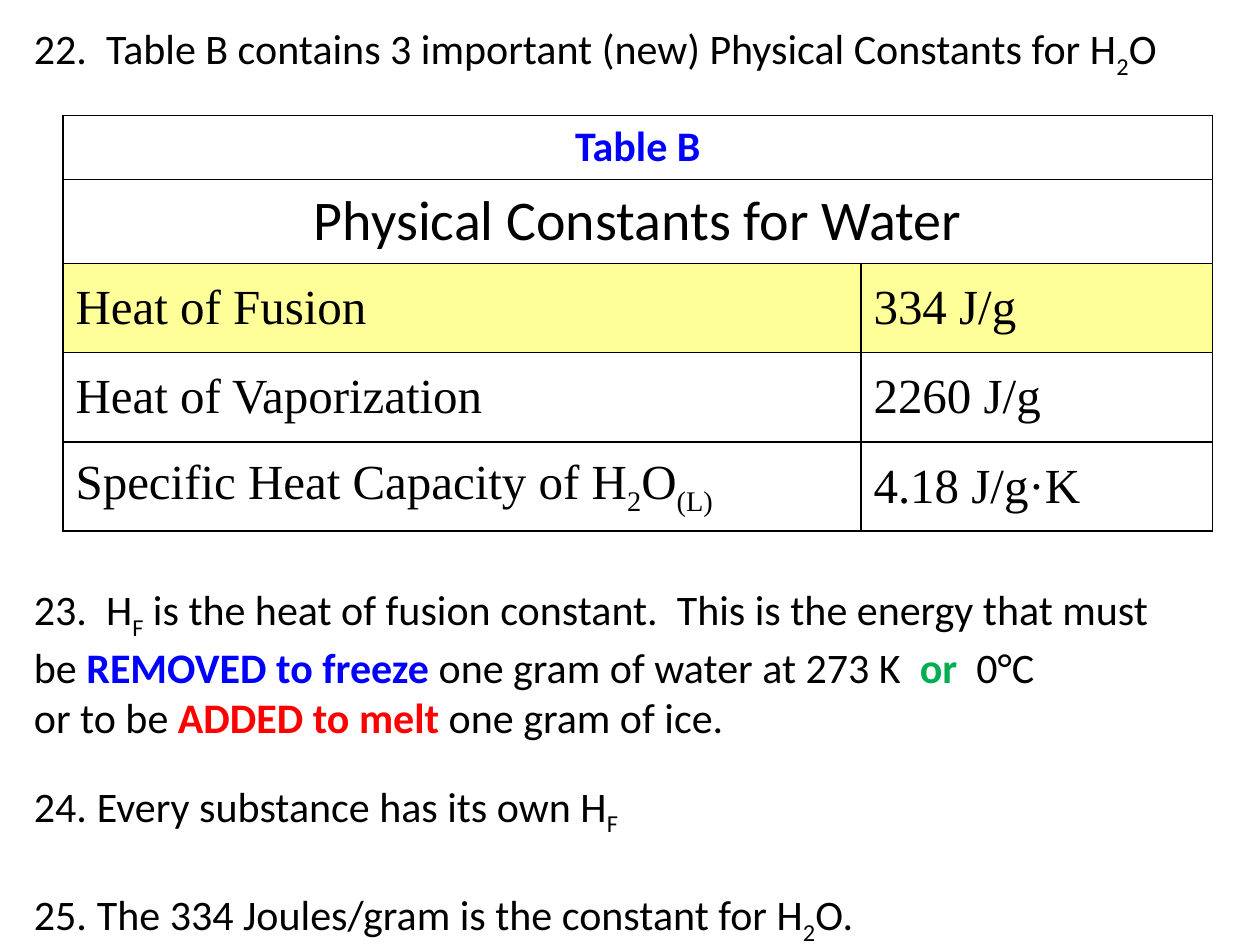
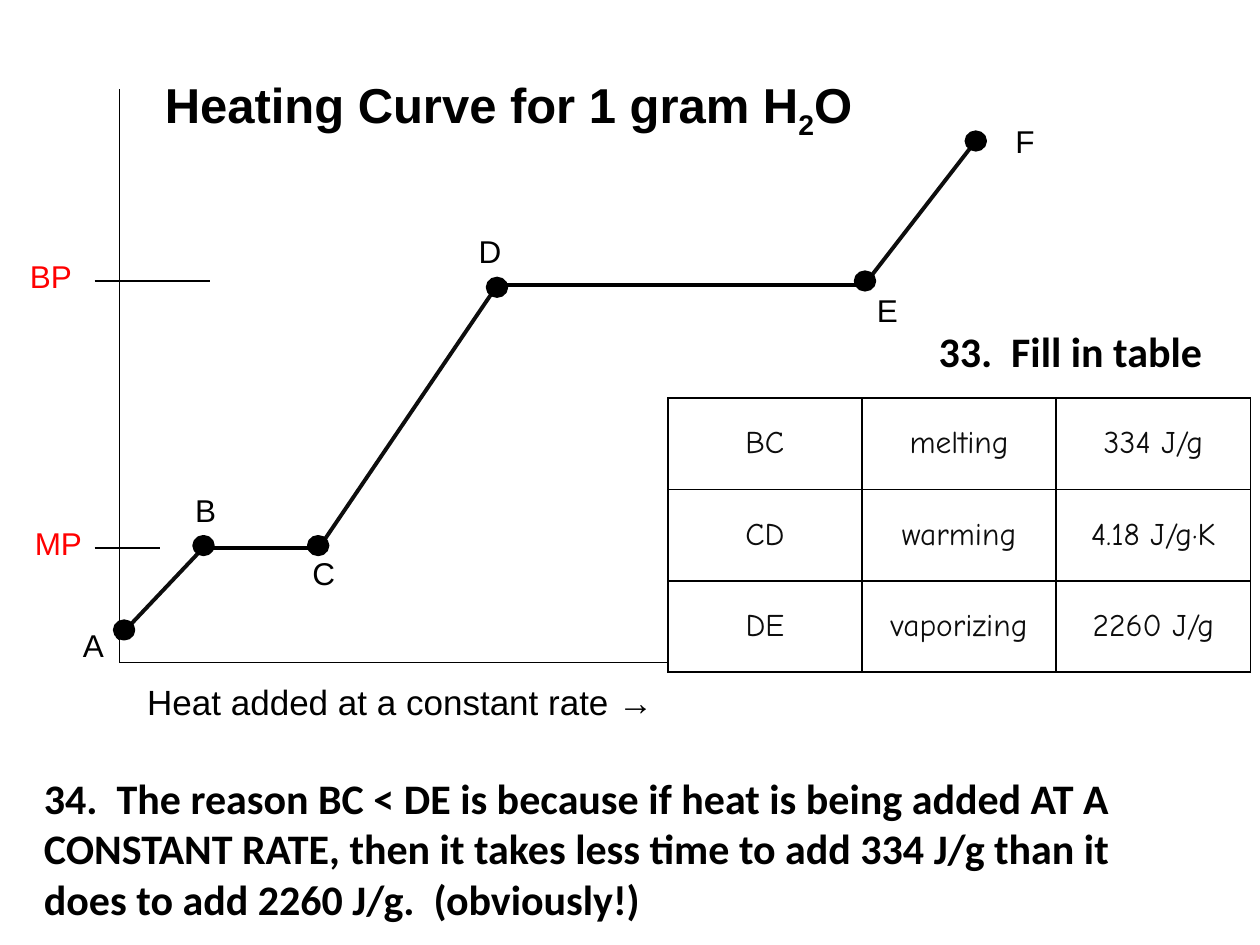
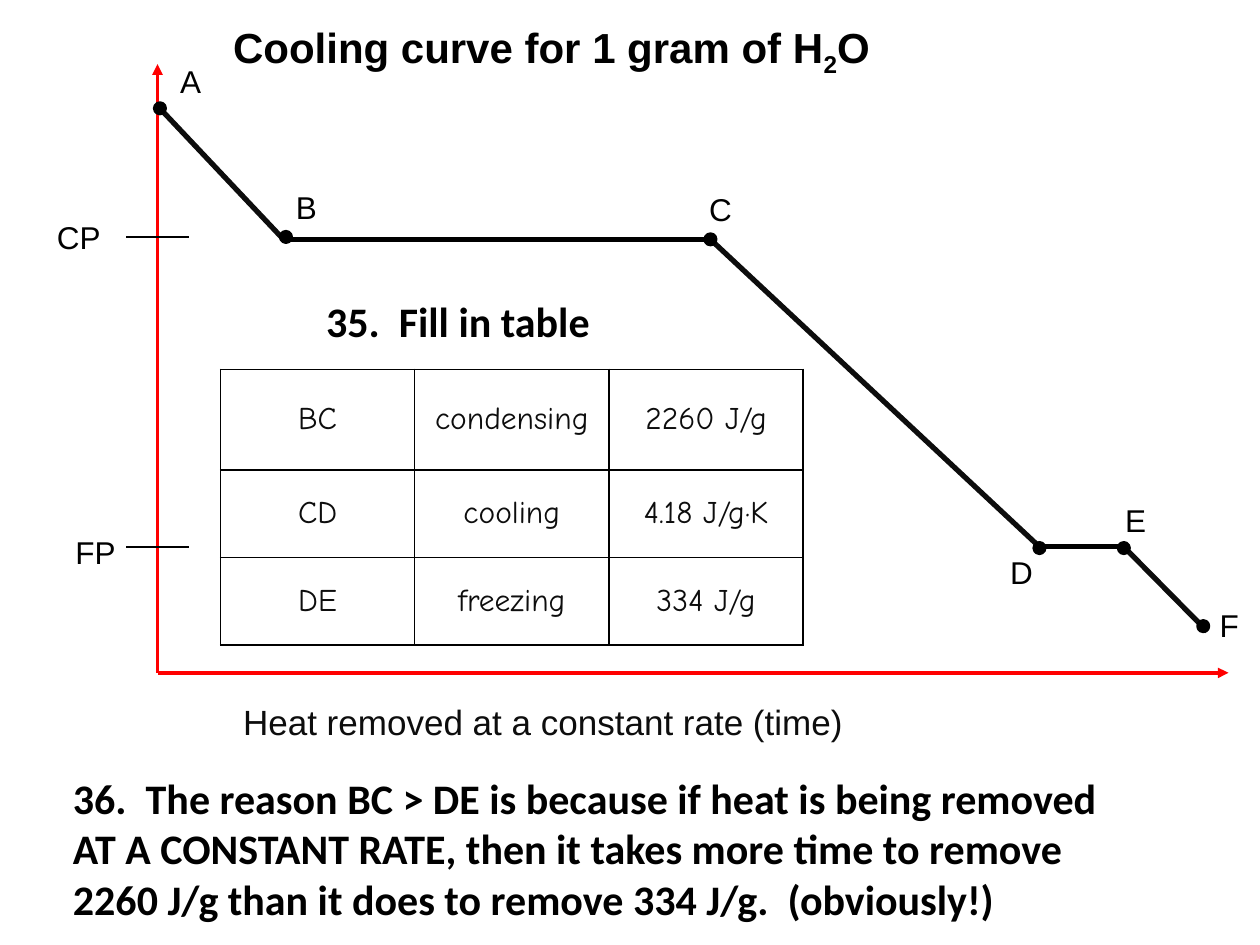
"""Build three slides on the physical constants and phase-change curves of water."""
from itertools import pairwise
from typing import NamedTuple

from lxml.etree import SubElement
from pptx import Presentation
from pptx.dml.color import RGBColor
from pptx.enum.shapes import MSO_CONNECTOR, MSO_SHAPE
from pptx.enum.text import MSO_ANCHOR as Anchor, MSO_AUTO_SIZE, PP_ALIGN as Align
from pptx.oxml.ns import qn
from pptx.util import Pt

BLACK = RGBColor(0x00, 0x00, 0x00)
INK = RGBColor(0x0D, 0x0D, 0x0D)
WHITE = RGBColor(0xFF, 0xFF, 0xFF)
RED = RGBColor(0xFF, 0x00, 0x00)
BLUE = RGBColor(0x00, 0x00, 0xFF)
GREEN = RGBColor(0x00, 0xB0, 0x50)
YELLOW = RGBColor(0xFF, 0xFF, 0x99)

TITLE_AND_BODY, TITLE_ONLY = 1, 5


class Style(NamedTuple):
    font: str
    size: float
    color: RGBColor = BLACK
    bold: bool = False


class CurvePoint(NamedTuple):
    label: str
    vertex: tuple
    dot: tuple
    caption: tuple


NOTE = Style("Calibri", 24)
NOTE_BOLD = NOTE._replace(bold=True)
LABEL = Style("Arial", 18)
RED_LABEL = LABEL._replace(color=RED)
AXIS_NAME = Style("Arial", 20)
ANSWER = Style("Comic Neue", 18, INK)
CONSTANT = Style("Times New Roman", 28)

HEATING_POINTS = [
    CurvePoint("A", (67, 365), (70.9, 360), (40.3, 354.2)),
    CurvePoint("B", (116, 313.2), (116.3, 311.8), (104.4, 277.2)),
    CurvePoint("C", (182.2, 313.2), (181.8, 311.8), (171.4, 313.2)),
    CurvePoint("D", (284.4, 162.7), (284, 164.2), (266.4, 128.9)),
    CurvePoint("E", (494, 162.7), (494.3, 160.6), (494, 162.7)),
    CurvePoint("F", (558, 80), (557.6, 80.6), (573.1, 66.2)),
]
COOLING_POINTS = [
    CurvePoint("A", (90, 60.5), (91.4, 61.9), (95.8, 31.7)),
    CurvePoint("B", (162, 136.8), (163.4, 135.4), (162, 103.7)),
    CurvePoint("C", (406, 136.8), (406, 136.8), (398.2, 105.1)),
    CurvePoint("D", (594, 312.5), (594, 313.2), (570.2, 312.5)),
    CurvePoint("E", (642.2, 312.5), (642.2, 313.2), (635.8, 283)),
    CurvePoint("F", (689.8, 360.7), (687.6, 357.8), (689.8, 342.7)),
]


def write(paragraph, text, style, align=Align.LEFT):
    """Append text to a paragraph, lowering the parts enclosed in underscores."""
    paragraph.alignment = align
    for part, piece in enumerate(text.split("_")):
        for row, line in enumerate(piece.split("\v")):
            if row:
                paragraph.add_line_break()
            if not line:
                continue
            run = paragraph.add_run()
            run.text = line
            run.font.name = style.font
            run.font.size = Pt(style.size)
            run.font.bold = style.bold
            run.font.color.rgb = style.color
            if part % 2:
                run.font._element.set("baseline", "-25000")


def place(shape, left, top, width, height):
    """Move a text shape and fix its frame to top-anchored wrapped text."""
    shape.left, shape.top = Pt(left), Pt(top)
    shape.width, shape.height = Pt(width), Pt(height)
    frame = shape.text_frame
    frame.word_wrap = True
    frame.auto_size = MSO_AUTO_SIZE.NONE
    frame.vertical_anchor = Anchor.TOP
    return frame


def add_titled_slide(prs, layout, title, style, box):
    """Add a slide whose title placeholder holds the given text."""
    slide = prs.slides.add_slide(prs.slide_layouts[layout])
    write(place(slide.shapes.title, *box).paragraphs[0], title, style)
    return slide


def add_text(slide, text, style, box, align=Align.LEFT):
    """Add one text box."""
    frame = place(slide.shapes.add_textbox(0, 0, 0, 0), *box)
    write(frame.paragraphs[0], text, style, align)


def set_number(paragraph, start=None):
    """Number a list paragraph from start, or clear its bullet."""
    properties = paragraph._p.get_or_add_pPr()
    indent = Pt(36) if start else 0
    properties.set("marL", str(indent))
    properties.set("indent", str(-indent))
    if start:
        SubElement(properties, qn("a:buFont"), typeface="+mj-lt")
        SubElement(properties, qn("a:buAutoNum"), type="arabicPeriod", startAt=str(start))
    else:
        SubElement(properties, qn("a:buNone"))


def add_line(slide, start, end, color=BLACK, weight=0.75, arrow=False):
    """Add a straight line, with an arrowhead at its end if asked."""
    line = slide.shapes.add_connector(
        MSO_CONNECTOR.STRAIGHT, *(Pt(value) for value in start + end))
    line.line.color.rgb = color
    line.line.width = Pt(weight)
    if arrow:
        SubElement(line.line._get_or_add_ln(), qn("a:tailEnd"), type="triangle")
    SubElement(line._element.spPr, qn("a:effectLst"))


def add_dot(slide, center, width, height):
    """Add a black dot around a centre."""
    dot = slide.shapes.add_shape(
        MSO_SHAPE.OVAL, Pt(center[0] - width / 2), Pt(center[1] - height / 2),
        Pt(width), Pt(height))
    dot.shadow.inherit = False
    dot.fill.solid()
    dot.fill.fore_color.rgb = BLACK
    dot.line.color.rgb = BLACK
    dot.line.width = Pt(2)


def add_curve(slide, points, weight, dot_size):
    """Draw the segments, captions and dots of a temperature curve."""
    for here, there in pairwise(points):
        plateau = here.vertex[1] == there.vertex[1]
        add_line(slide, here.vertex, there.vertex, BLACK if plateau else INK, weight)
    for point in points:
        add_text(slide, point.label, LABEL, (*point.caption, 30, 29))
        add_dot(slide, point.dot, *dot_size)


def format_cell(cell, text, style, align, fill):
    """Fill, border and write one table cell."""
    cell.fill.solid()
    cell.fill.fore_color.rgb = fill
    cell.vertical_anchor = Anchor.MIDDLE
    properties = cell._tc.get_or_add_tcPr()
    for position, side in enumerate(("lnL", "lnR", "lnT", "lnB")):
        border = SubElement(properties, qn(f"a:{side}"), w=str(Pt(1)))
        SubElement(SubElement(border, qn("a:solidFill")), qn("a:srgbClr"), val=str(BLACK))
        properties.insert(position, border)
    if text:
        write(cell.text_frame.paragraphs[0], text, style, align)


def add_grid(slide, left, top, columns, heights, rows):
    """Add a bordered table; each row is (texts, style, alignment, fill)."""
    table = slide.shapes.add_table(
        len(rows), len(columns), Pt(left), Pt(top),
        Pt(sum(columns)), Pt(sum(heights))).table
    table.first_row = table.horz_banding = False
    for column, width in zip(table.columns, columns):
        column.width = Pt(width)
    for index, (texts, style, align, fill) in enumerate(rows):
        table.rows[index].height = Pt(heights[index])
        for number in range(len(columns)):
            text = texts[number] if number < len(texts) else ""
            format_cell(table.cell(index, number), text, style, align, fill)
        if len(texts) == 1:
            table.cell(index, 0).merge(table.cell(index, len(columns) - 1))


def add_answers(slide, left, top, heights, answers):
    """Add the three-column answer table of a curve."""
    rows = [(texts, ANSWER, Align.CENTER, WHITE) for texts in answers]
    add_grid(slide, left, top, [111] * 3, heights, rows)


def build_constants(prs):
    """Build the slide with Table B and its notes."""
    slide = add_titled_slide(
        prs, TITLE_AND_BODY,
        "22.  Table B contains 3 important (new) Physical Constants for H_2_O",
        NOTE, (12.2, 9.4, 690, 40))
    body = place(slide.placeholders[1], 12.2, 330, 690, 205)
    fusion = body.paragraphs[0]
    for text, style in (
        ("23.  H_F_ is the heat of fusion constant.  This is the energy that must \vbe ", NOTE),
        ("REMOVED to freeze ", NOTE_BOLD._replace(color=BLUE)),
        ("one gram of water at 273 K  ", NOTE),
        ("or  ", NOTE_BOLD._replace(color=GREEN)),
        ("0°C\vor to be ", NOTE),
        ("ADDED to melt ", NOTE_BOLD._replace(color=RED)),
        ("one gram of ice.", NOTE),
    ):
        write(fusion, text, style)
    fusion.space_before = Pt(0)
    set_number(fusion)
    for text, gap in (("Every substance has its own H_F_", 22),
                      ("The 334 Joules/gram is the constant for H_2_O.", 29)):
        item = body.add_paragraph()
        write(item, text, NOTE)
        item.space_before = Pt(gap)
        set_number(item, 24)
    add_grid(slide, 36, 66, [456, 201], [36, 48, 51, 51, 51], [
        (["Table B"], NOTE_BOLD._replace(color=BLUE), Align.CENTER, WHITE),
        (["Physical Constants for Water"], Style("Calibri", 32), Align.CENTER, WHITE),
        (["Heat of Fusion", "334 J/g"], CONSTANT, Align.LEFT, YELLOW),
        (["Heat of Vaporization", "2260 J/g"], CONSTANT, Align.LEFT, WHITE),
        (["Specific Heat Capacity of H_2_O_(L)_", "4.18 J/g·K"], CONSTANT, Align.LEFT, WHITE),
    ])


def build_heating(prs):
    """Build the heating curve slide."""
    slide = add_titled_slide(prs, TITLE_ONLY, "Heating Curve for 1 gram H_2_O",
                             Style("Arial", 28, bold=True), (87, 39, 461, 41))
    origin = (68.4, 378.7)
    add_line(slide, (68.4, 51.1), origin)
    add_line(slide, origin, (401.8, 378.7))
    add_line(slide, (54, 313.2), (91.4, 313.2))
    add_line(slide, (54, 160.6), (120.2, 160.6))
    add_text(slide, "MP", RED_LABEL, (0, 296, 54, 29), Align.RIGHT)
    add_text(slide, "BP", RED_LABEL, (5, 143.3, 43.2, 29), Align.RIGHT)
    add_text(slide, "Heat added at a constant rate →", AXIS_NAME, (77, 385.2, 312, 32))
    add_curve(slide, HEATING_POINTS, 2.25, (10.8, 10.1))
    add_answers(slide, 381.6, 227.5, [52.2] * 3, [
        ("BC", "melting", "334 J/g"),
        ("CD", "warming", "4.18 J/g·K"),
        ("DE", "vaporizing", "2260 J/g"),
    ])
    add_text(slide, "34.  The reason BC < DE is because if heat is being added AT A CONSTANT RATE, "
             "then it takes less time to add 334 J/g than it does to add 2260 J/g.  (obviously!)",
             NOTE_BOLD, (18, 437.8, 672, 94))
    add_text(slide, "33.  Fill in table", NOTE_BOLD, (529.2, 182.2, 182, 36))


def build_cooling(prs):
    """Build the cooling curve slide."""
    slide = add_titled_slide(prs, TITLE_ONLY, "Cooling curve for 1 gram of H_2_O",
                             Style("Arial", 24, bold=True), (126, 8.6, 490, 36))
    origin = (90, 384.5)
    for tip in ((90, 36.7), (702, 384.5)):
        add_line(slide, origin, tip, RED, 2, arrow=True)
    for level in (135.4, 312.5):
        add_line(slide, (72, level), (108, level))
    add_text(slide, "CP", LABEL, (15, 121, 60, 29), Align.CENTER)
    add_text(slide, "FP", LABEL, (36, 301, 42, 29))
    add_text(slide, "Heat removed at a constant rate (time)", AXIS_NAME._replace(color=INK),
             (131.8, 396.7, 540, 32))
    add_curve(slide, COOLING_POINTS, 3, (6, 6))
    add_answers(slide, 126, 211, [57.5, 50, 50], [
        ("BC", "condensing", "2260 J/g"),
        ("CD", "cooling", "4.18 J/g·K"),
        ("DE", "freezing", "334 J/g"),
    ])
    add_text(slide, "36.  The reason BC > DE is because if heat is being removed \v"
             "AT A CONSTANT RATE, then it takes more time to remove \v"
             "2260 J/g than it does to remove 334 J/g.  (obviously!)",
             NOTE_BOLD, (34.6, 437.8, 650, 94))
    add_text(slide, "35.  Fill in table", NOTE_BOLD, (179.3, 165.6, 182, 36))


def main():
    """Build and save the presentation."""
    prs = Presentation()
    prs.slide_width, prs.slide_height = Pt(720), Pt(540)
    build_constants(prs)
    build_heating(prs)
    build_cooling(prs)
    prs.save("out.pptx")


if __name__ == "__main__":
    main()
